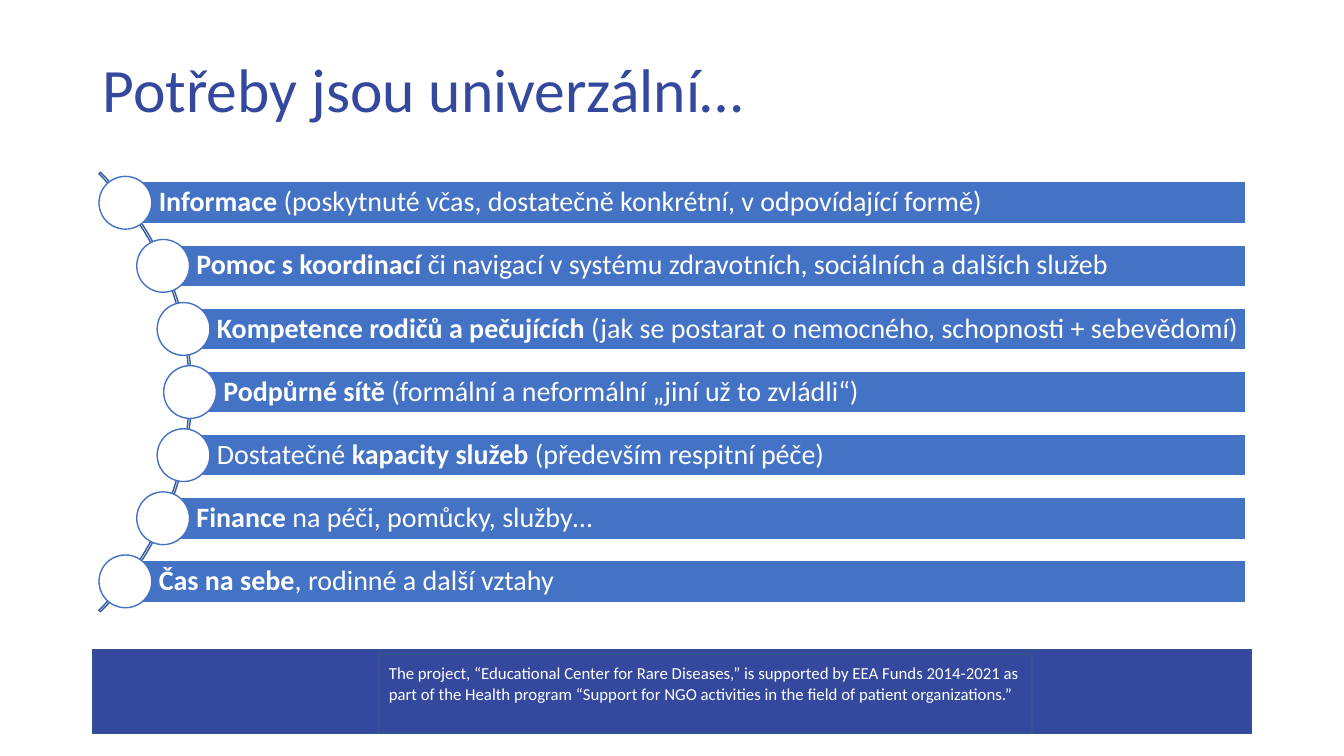
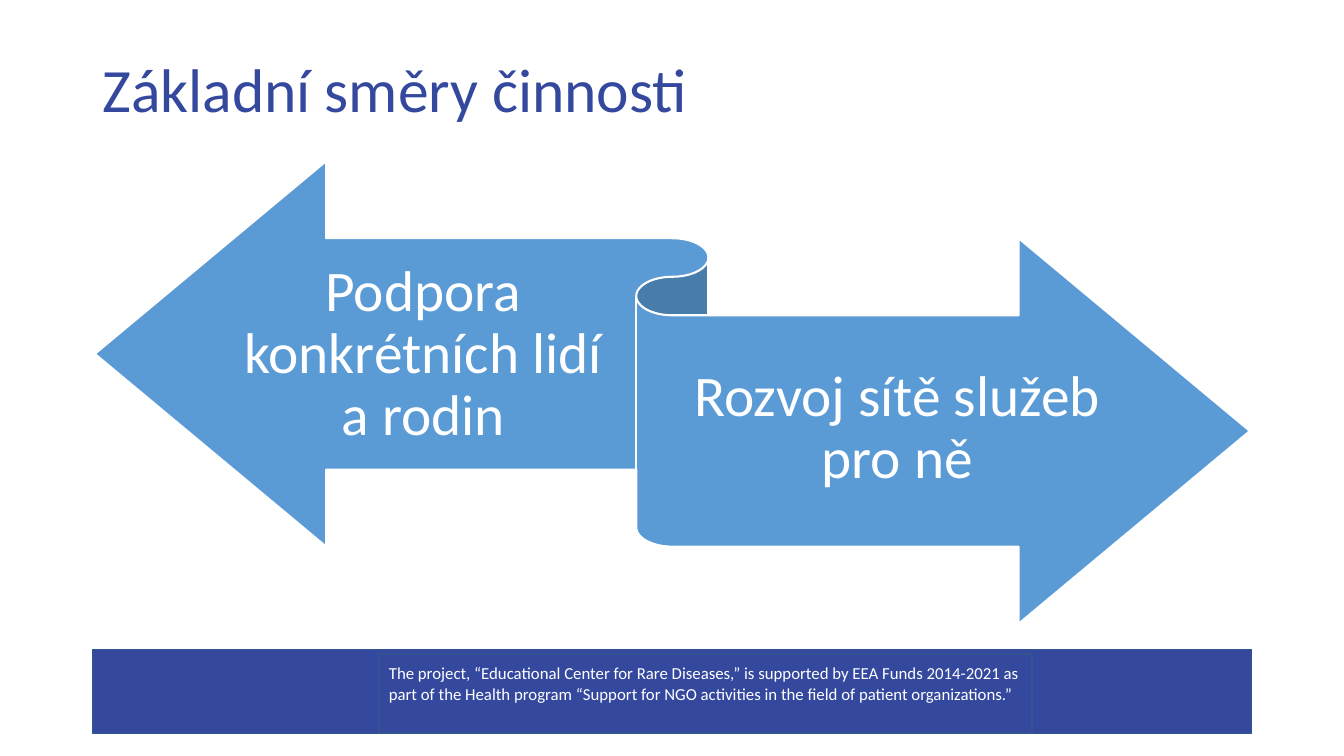
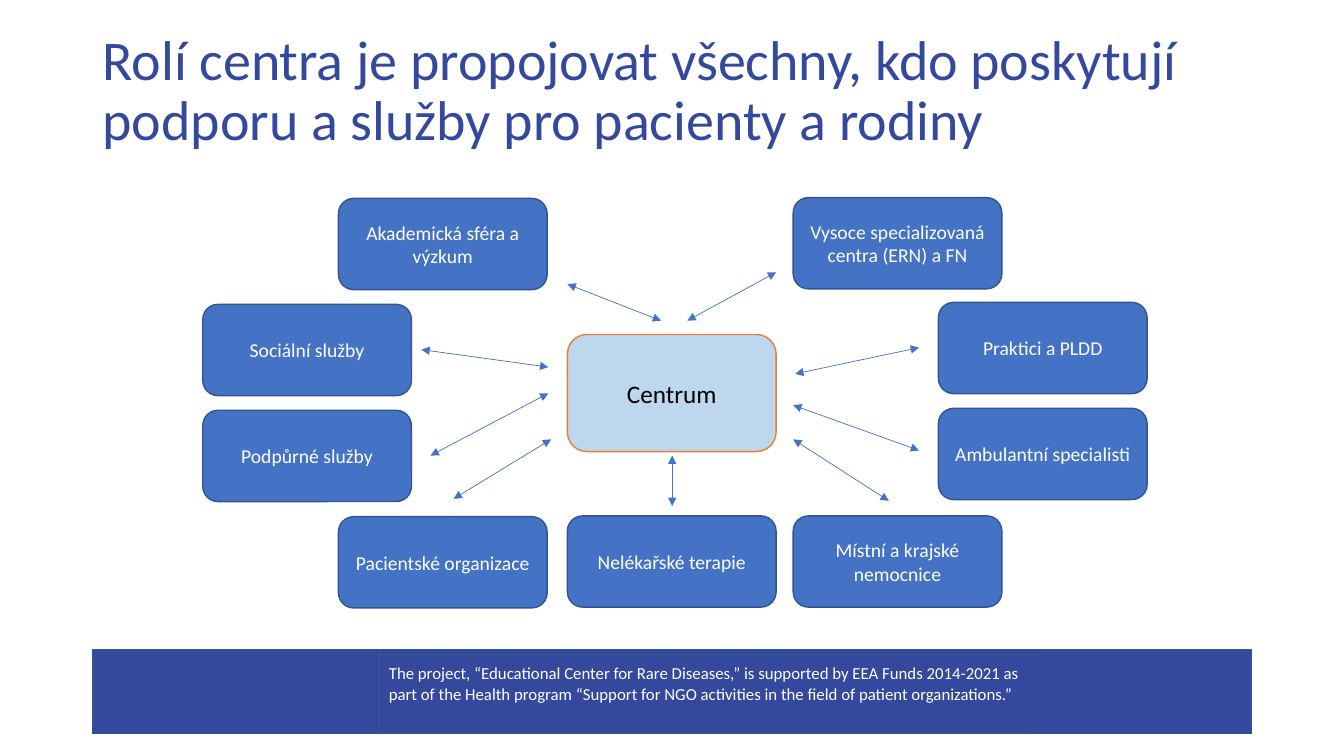
import math
import pptx
import pptx.util
import pptx.dml.color
import pptx.enum.shapes
import pptx.enum.text
import pptx.oxml.ns
import lxml.etree

Cm = pptx.util.Cm
Pt = pptx.util.Pt
SHAPE = pptx.enum.shapes.MSO_SHAPE
ANCHOR = pptx.enum.text.MSO_ANCHOR
ALIGN = pptx.enum.text.PP_ALIGN
qn = pptx.oxml.ns.qn

FONT = "Calibri"
COLORS = {
    "navy": "34489E",
    "navy line": "325491",
    "arc line": "365B9D",
    "blue": "4472C4",
    "light blue": "5B9BD5",
    "pale blue": "BDD7EE",
    "orange": "ED7D31",
    "white": "FFFFFF",
    "black": "000000",
}


def add_shape(slide, kind, left, top, width, height, fill, line, weight=1):
    shape = slide.shapes.add_shape(kind, Cm(left), Cm(top), Cm(width), Cm(height))
    shape.shadow.inherit = False
    if fill:
        shape.fill.solid()
        shape.fill.fore_color.rgb = pptx.dml.color.RGBColor.from_string(COLORS[fill])
    else:
        shape.fill.background()
    shape.line.color.rgb = pptx.dml.color.RGBColor.from_string(COLORS[line])
    shape.line.width = Pt(weight)
    return shape


def write_text(frame, runs, size, color, alignment=ALIGN.LEFT, spacing=1.0, anchor=ANCHOR.MIDDLE):
    frame.word_wrap = True
    frame.auto_size = pptx.enum.text.MSO_AUTO_SIZE.NONE
    frame.vertical_anchor = anchor
    paragraph = frame.paragraphs[0]
    paragraph.alignment = alignment
    paragraph.line_spacing = spacing
    for text, bold in runs:
        run = paragraph.add_run()
        run.text = text
        run.font.name = FONT
        run.font.size = Pt(size)
        run.font.bold = bold
        run.font.color.rgb = pptx.dml.color.RGBColor.from_string(COLORS[color])


presentation = pptx.Presentation()
presentation.slide_width = Cm(33.87)
presentation.slide_height = Cm(19.05)

layout = presentation.slide_layouts[5]
for placeholder in list(layout.placeholders)[1:]:
    placeholder.element.getparent().remove(placeholder.element)

titles = [
    ("Potřeby jsou univerzální…", 44),
    ("Základní směry činnosti", 44),
    ("Rolí centra je propojovat všechny, kdo poskytují podporu a služby pro pacienty a rodiny", 40),
]
slides = []
for text, size in titles:
    slide = presentation.slides.add_slide(layout)
    title = slide.shapes.title
    title.left, title.top, title.width, title.height = Cm(2.33), Cm(0.94), Cm(29.21), Cm(2.77)
    write_text(title.text_frame, [(text, False)], size, "navy", spacing=0.9)
    slides.append(slide)
needs_slide, directions_slide, network_slide = slides

band = add_shape(needs_slide, SHAPE.RECTANGLE, 2.33, 16.36, 29.21, 2.13, "navy", "navy line")
notice = add_shape(needs_slide, SHAPE.RECTANGLE, 9.55, 16.48, 16.46, 1.98, "navy", "navy line")
notice.text_frame.margin_top = Cm(0.23)
notice_text = (
    "The project, “Educational Center for Rare Diseases,” is supported by EEA Funds 2014-2021 "
    "as part of the Health program “Support for NGO activities in the field of patient organizations.”"
)
write_text(notice.text_frame, [(notice_text, False)], 12, "white", anchor=ANCHOR.TOP)
for shape in (band, notice):
    layout.shapes.element.append(shape.element)

needs = [
    [("Informace ", True), ("(poskytnuté včas, dostatečně konkrétní, v odpovídající formě)", False)],
    [("Pomoc s koordinací ", True),
     ("či navigací v systému zdravotních, sociálních a dalších služeb", False)],
    [("Kompetence rodičů a pečujících ", True),
     ("(jak se postarat o nemocného, schopnosti + sebevědomí)", False)],
    [("Podpůrné sítě ", True), ("(formální a neformální „jiní už to zvládli“)", False)],
    [("Dostatečné ", False), ("kapacity služeb ", True), ("(především respitní péče)", False)],
    [("Finance ", True), ("na péči, pomůcky, služby…", False)],
    [("Čas na sebe", True), (", rodinné a další vztahy", False)],
]
center_x, center_y, radius, row_pitch = -3.01, 9.88, 7.8, 1.59
bar_right, bar_height, node_size, arc_size = 31.39, 1.06, 1.33, 15.67

arc = add_shape(needs_slide, SHAPE.BLOCK_ARC, center_x - arc_size / 2, center_y - arc_size / 2,
                arc_size, arc_size, None, "arc line")
arc.adjustments[0] = 189
arc.adjustments[1] = 27
arc.adjustments[2] = 0.0035

for index, runs in enumerate(needs):
    offset = (index - len(needs) // 2) * row_pitch
    node_x = center_x + math.sqrt(radius ** 2 - offset ** 2)
    node_y = center_y + offset
    bar = add_shape(needs_slide, SHAPE.RECTANGLE, node_x, node_y - bar_height / 2,
                    bar_right - node_x, bar_height, "blue", "white")
    frame = bar.text_frame
    frame.margin_left, frame.margin_right = Cm(0.84), Cm(0)
    frame.margin_top = frame.margin_bottom = Cm(0.15)
    write_text(frame, runs, 20, "white", spacing=0.9)
    add_shape(needs_slide, SHAPE.OVAL, node_x - node_size / 2, node_y - node_size / 2,
              node_size, node_size, "white", "blue")

add_shape(directions_slide, SHAPE.LEFT_RIGHT_RIBBON, 2.39, 4.06, 29.11, 11.66,
          "light blue", "white", 1.5)
directions = [
    ("Podpora konkrétních lidí a rodin", 5.87, 6.1, 9.6),
    ("Rozvoj sítě služeb pro ně", 16.94, 7.95, 11.35),
]
for text, left, top, width in directions:
    box = directions_slide.shapes.add_textbox(Cm(left), Cm(top), Cm(width), Cm(5.72))
    frame = box.text_frame
    frame.margin_left = frame.margin_right = Cm(0)
    frame.margin_top, frame.margin_bottom = Cm(0.41), Cm(0.43)
    write_text(frame, [(text, False)], 41, "white", ALIGN.CENTER, 0.9)

hub = add_shape(network_slide, SHAPE.ROUNDED_RECTANGLE, 14.3, 8.43, 5.26, 2.95, "pale blue", "orange")
write_text(hub.text_frame, [("Centrum", False)], 18, "black", ALIGN.CENTER)

partners = [
    ("Vysoce specializovaná centra (ERN) a FN", 19.99, 4.98),
    ("Praktici a PLDD", 23.65, 7.62),
    ("Ambulantní specialisti", 23.65, 10.29),
    ("Místní a krajské nemocnice", 19.99, 13),
    ("Akademická sféra a výzkum", 8.53, 5),
    ("Sociální služby", 5.11, 7.67),
    ("Podpůrné služby", 5.11, 10.34),
    ("Pacientské organizace", 8.53, 13.02),
    ("Nelékařské terapie", 14.3, 13),
]
for text, left, top in partners:
    partner = add_shape(network_slide, SHAPE.ROUNDED_RECTANGLE, left, top, 5.26, 2.3,
                        "blue", "navy line")
    write_text(partner.text_frame, [(text, False)], 14, "white", ALIGN.CENTER)

links = [
    (19.99, 10.21, 23.16, 11.35),
    (20.04, 9.42, 23.16, 8.76),
    (19.99, 11.07, 22.4, 12.62),
    (16.94, 11.48, 16.94, 12.75),
    (13.89, 11.07, 11.43, 12.57),
    (13.82, 9.91, 10.85, 11.48),
    (13.82, 9.25, 10.62, 8.81),
    (16.66, 8.08, 14.3, 7.16),
    (17.32, 8.08, 19.56, 6.86),
]
for link in links:
    connector = network_slide.shapes.add_connector(
        pptx.enum.shapes.MSO_CONNECTOR.STRAIGHT, *[Cm(value) for value in link])
    connector.line.color.rgb = pptx.dml.color.RGBColor.from_string(COLORS["blue"])
    connector.line.width = Pt(0.5)
    line_element = connector.line._get_or_add_ln()
    for end in ("a:headEnd", "a:tailEnd"):
        lxml.etree.SubElement(line_element, qn(end), type="triangle")
    lxml.etree.SubElement(connector.element.spPr, qn("a:effectLst"))

presentation.save("out.pptx")
